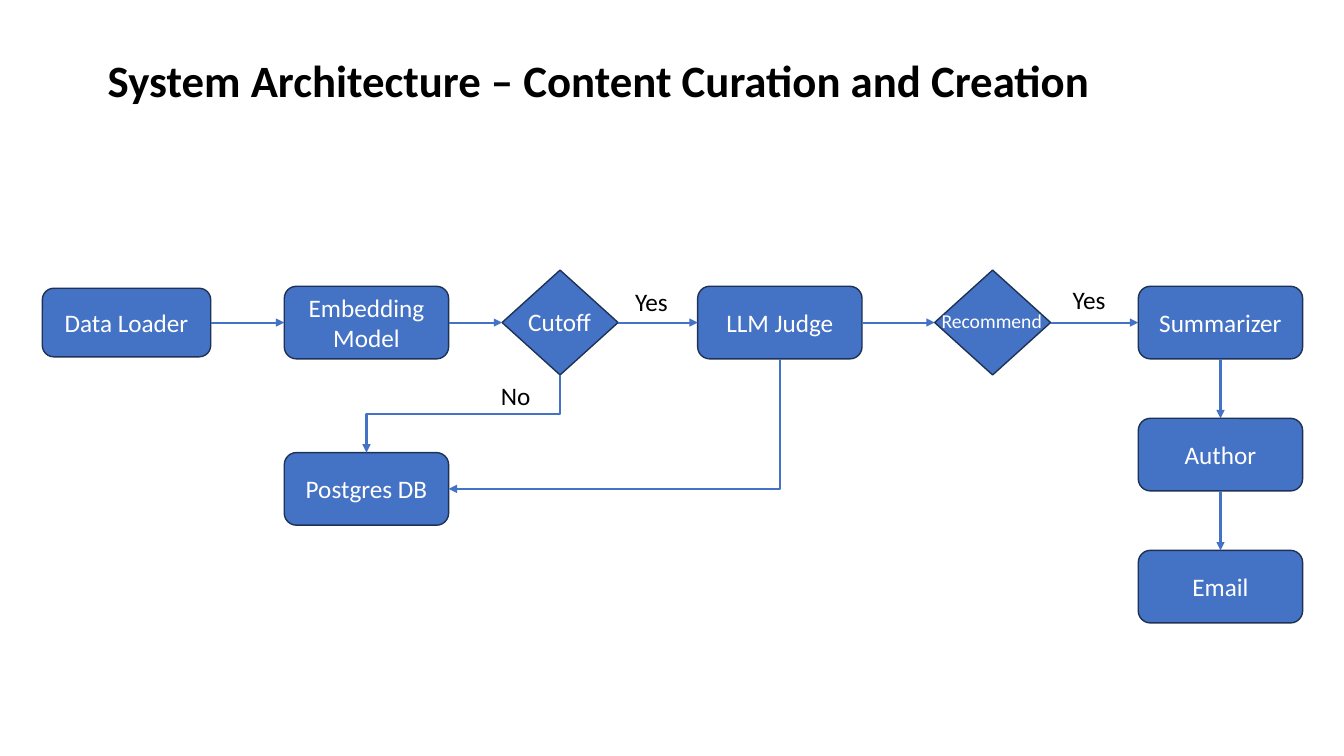
"""Build the content curation and creation architecture slide."""
from lxml.etree import SubElement
from pptx import Presentation
from pptx.dml.color import RGBColor
from pptx.enum.shapes import MSO_CONNECTOR, MSO_SHAPE
from pptx.enum.text import MSO_ANCHOR, PP_ALIGN
from pptx.oxml.ns import qn
from pptx.util import Emu, Pt

TITLE = ("System Architecture – Content Curation and Creation", 97, 10, 1150, 145)
FLOW_MIDDLE, POSTGRES_MIDDLE, COLUMN_STEP = 320, 485, 131
BOX_SIZE, LOADER_SIZE, DIAMOND_SIZE = (163, 72), (167, 68), (115, 104)
BOXES = [
    ("Data Loader", 42, FLOW_MIDDLE, LOADER_SIZE),
    ("Embedding Model", 282, FLOW_MIDDLE, BOX_SIZE),
    ("LLM Judge", 692, FLOW_MIDDLE, BOX_SIZE),
    ("Postgres DB", 282, POSTGRES_MIDDLE, BOX_SIZE),
] + [
    (name, 1129, FLOW_MIDDLE + row * COLUMN_STEP, BOX_SIZE)
    for row, name in enumerate(("Summarizer", "Author", "Email"))
]
DIAMONDS = [("Cutoff", 498), ("Recommend", 927)]
TOP, LEFT, BOTTOM, RIGHT = range(4)
STRAIGHT_ARROWS = [
    ("Data Loader", RIGHT, "Embedding Model", LEFT),
    ("Embedding Model", RIGHT, "Cutoff", LEFT),
    ("Cutoff", RIGHT, "LLM Judge", LEFT),
    ("LLM Judge", RIGHT, "Recommend", LEFT),
    ("Recommend", RIGHT, "Summarizer", LEFT),
    ("Summarizer", BOTTOM, "Author", TOP),
    ("Author", BOTTOM, "Email", TOP),
]
ELBOW_ARROWS = [
    ("Cutoff", BOTTOM, "Postgres DB", TOP, "bentConnector3"),
    ("LLM Judge", BOTTOM, "Postgres DB", RIGHT, "bentConnector2"),
]
LABELS = [
    ("Cutoff", 514, 299, 84, 40, "white", "body"),
    ("Recommend", 924, 302, 120, 34, "white", "small"),
    ("Yes", 620, 279, 53, 40, "black", "body"),
    ("Yes", 1054, 277, 53, 40, "black", "body"),
    ("No", 487, 372, 50, 40, "black", "body"),
]
THEME = {
    "font": "Calibri",
    "colors": {"blue": "4472C4", "outline": "1E3256", "white": "FFFFFF", "black": "000000"},
    "sizes": {"title": 32, "body": 18, "small": 14},
    "outline": 1,
    "arrow": 1.5,
}


def px(length):
    return Emu(length * 9144)


def color(name):
    return RGBColor.from_string(THEME["colors"][name])


def write(shape, text, color_name, size_name, align=PP_ALIGN.LEFT, bold=False):
    para = shape.text_frame.paragraphs[0]
    para.text = text
    para.alignment = align
    para.font.name = THEME["font"]
    para.font.size = Pt(THEME["sizes"][size_name])
    para.font.bold = bold
    para.font.color.rgb = color(color_name)
    return para


def add_node(slide, kind, left, middle, size):
    width, height = size
    node = slide.shapes.add_shape(
        kind, px(left), px(middle - height // 2), px(width), px(height))
    node.shadow.inherit = False
    node.fill.solid()
    node.fill.fore_color.rgb = color("blue")
    node.line.color.rgb = color("outline")
    node.line.width = Pt(THEME["outline"])
    return node


def add_arrow(slide, start, start_side, end, end_side):
    arrow = slide.shapes.add_connector(MSO_CONNECTOR.STRAIGHT, 0, 0, 0, 0)
    arrow.begin_connect(start, start_side)
    arrow.end_connect(end, end_side)
    arrow.line.color.rgb = color("blue")
    arrow.line.width = Pt(THEME["arrow"])
    SubElement(arrow.line._get_or_add_ln(), qn("a:tailEnd"), type="triangle")
    SubElement(arrow._element.spPr, qn("a:effectLst"))
    return arrow


def bend(arrow, preset):
    """Turn an arrow running down and left into an elbow that leaves downward."""
    across, down = arrow.width, arrow.height
    middle_x, middle_y = arrow.left + across // 2, arrow.top + down // 2
    arrow.left, arrow.top = middle_x - down // 2, middle_y - across // 2
    arrow.width, arrow.height = down, across
    properties = arrow._element.spPr
    frame = properties.find(qn("a:xfrm"))
    for flip in ("flipH", "flipV"):
        frame.attrib.pop(flip, None)
    frame.set("rot", "5400000")
    properties.find(qn("a:prstGeom")).set("prst", preset)


def main():
    deck = Presentation()
    deck.slide_width, deck.slide_height = px(1333), px(750)
    slide = deck.slides.add_slide(deck.slide_layouts[6])

    text, *place = TITLE
    title = slide.shapes.add_textbox(*map(px, place))
    title.text_frame.word_wrap = True
    title.text_frame.vertical_anchor = MSO_ANCHOR.MIDDLE
    write(title, text, "black", "title", bold=True).line_spacing = 0.9

    nodes = {}
    for name, left, middle, size in BOXES:
        nodes[name] = add_node(slide, MSO_SHAPE.ROUNDED_RECTANGLE, left, middle, size)
        nodes[name].text_frame.vertical_anchor = MSO_ANCHOR.MIDDLE
        write(nodes[name], name, "white", "body", PP_ALIGN.CENTER)
    for name, left in DIAMONDS:
        nodes[name] = add_node(slide, MSO_SHAPE.DIAMOND, left, FLOW_MIDDLE, DIAMOND_SIZE)

    for start, start_side, end, end_side in STRAIGHT_ARROWS:
        add_arrow(slide, nodes[start], start_side, nodes[end], end_side)
    for start, start_side, end, end_side, preset in ELBOW_ARROWS:
        bend(add_arrow(slide, nodes[start], start_side, nodes[end], end_side), preset)

    for text, left, top, width, height, color_name, size_name in LABELS:
        label = slide.shapes.add_textbox(px(left), px(top), px(width), px(height))
        label.text_frame.word_wrap = False
        write(label, text, color_name, size_name)

    deck.save("out.pptx")


if __name__ == "__main__":
    main()
